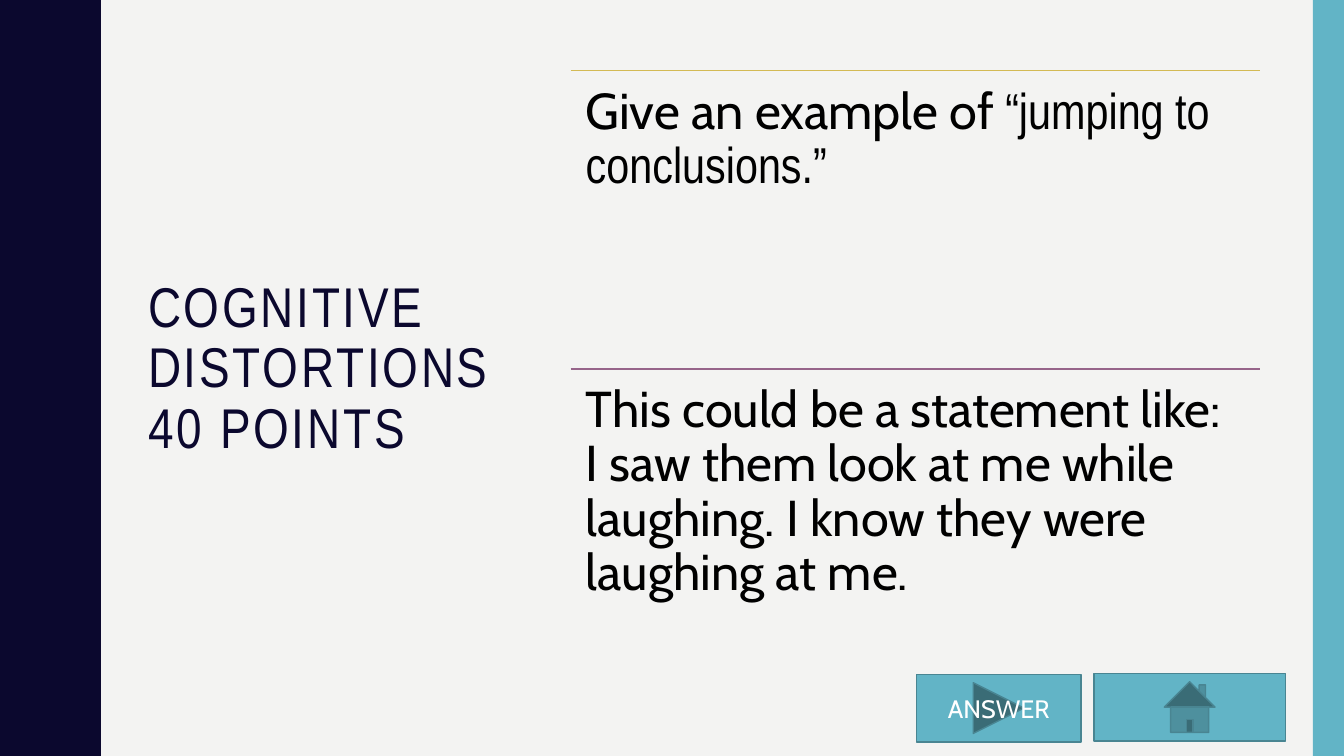
"""Build a quiz slide with a wavy side band, a question, its answer and two buttons."""
from lxml.etree import SubElement
from pptx import Presentation
from pptx.dml.color import RGBColor
from pptx.enum.shapes import MSO_CONNECTOR, MSO_SHAPE
from pptx.enum.text import MSO_ANCHOR, PP_ALIGN
from pptx.oxml.ns import qn
from pptx.util import Inches, Pt

WIDTH, HEIGHT = 13.33, 7.5
HEAD, BODY = "Arial Narrow", "Cabin"
COLORS = {"paper": "F3F3F2", "navy": "0B082E", "teal": "62B4C6", "edge": "498592",
          "gold": "D3BA55", "plum": "96648A", "black": "000000", "white": "FFFFFF"}

TITLE = "COGNITIVE DISTORTIONS\v40 POINTS"
SECTIONS = [
    ("gold", [("Give an example of ", BODY), ("“jumping to conclusions.”", HEAD)]),
    ("plum", [("This could be a statement like: I saw them look at me while laughing. "
               "I know they were laughing at me.", BODY)]),
]
BUTTONS = [
    (MSO_SHAPE.ACTION_BUTTON_HOME, (10.85, 6.68, 1.9, 0.67), ""),
    (MSO_SHAPE.ACTION_BUTTON_FORWARD_OR_NEXT, (9.09, 6.69, 1.63, 0.67), "ANSWER"),
]
SECTION_LEFT, SECTION_TOP, SECTION_WIDTH, SECTION_HEIGHT = 5.66, 0.7, 6.84, 2.96
WAVES = 5
HALF_WAVE = [(0.78, 0), (0.78, 0.07), (0.79, 0.14), (0.8, 0.2), (0.81, 0.25),
             (0.83, 0.29), (0.85, 0.33), (0.87, 0.38), (0.89, 0.42), (0.91, 0.46),
             (0.93, 0.5), (0.95, 0.55), (0.96, 0.61), (0.97, 0.68), (0.97, 0.75)]


def rgb(name):
    return RGBColor.from_string(COLORS[name])


def paint(sp, fill, line=None):
    sp.shadow.inherit = False
    sp.fill.solid()
    sp.fill.fore_color.rgb = rgb(fill)
    if line:
        sp.line.color.rgb = rgb(line)
        sp.line.width = Pt(1)
    else:
        sp.line.fill.background()


def set_font(font, size, color, name=None):
    font.size = Pt(size)
    font.color.rgb = rgb(color)
    if name:
        font.name = name


def add_text_frame(s, *box):
    tf = s.shapes.add_textbox(*map(Inches, box)).text_frame
    tf.word_wrap = True
    tf.paragraphs[0].line_spacing = 0.9
    return tf


def add_wave(s):
    period = HEIGHT / WAVES
    wave = HALF_WAVE + [(x, period - y) for x, y in HALF_WAVE[-2::-1]]
    edge = [(x, i * period + y) for i in range(WAVES) for x, y in wave]
    builder = s.shapes.build_freeform(0, 0, scale=Inches(1))
    builder.add_line_segments(edge + [(0, HEIGHT)], close=True)
    paint(builder.convert_to_shape(), "navy")


def add_button(s, kind, box, label):
    sp = s.shapes.add_shape(kind, *map(Inches, box))
    paint(sp, "teal", "edge")
    if label:
        tf = sp.text_frame
        tf.vertical_anchor = MSO_ANCHOR.MIDDLE
        p = tf.paragraphs[0]
        p.text = label
        p.alignment = PP_ALIGN.CENTER
        set_font(p.font, 18, "white", BODY)


def add_title(s):
    tf = add_text_frame(s, 1.37, 0.71, 3.7, 5.91)
    tf.vertical_anchor = MSO_ANCHOR.MIDDLE
    p = tf.paragraphs[0]
    p.text = TITLE
    set_font(p.font, 40, "navy", HEAD)
    for r in p.runs:
        r._r.get_or_add_rPr().set("spc", "200")


def add_section(s, top, color, runs):
    left, right = SECTION_LEFT, SECTION_LEFT + SECTION_WIDTH
    rule = s.shapes.add_connector(MSO_CONNECTOR.STRAIGHT,
                                  *map(Inches, (left, top, right, top)))
    rule.line.color.rgb = rgb(color)
    rule.line.width = Pt(1)
    SubElement(rule._element.spPr, qn("a:effectLst"))
    tf = add_text_frame(s, left, top, SECTION_WIDTH, SECTION_HEIGHT)
    tf.margin_left = tf.margin_top = tf.margin_right = tf.margin_bottom = Inches(0.15)
    p = tf.paragraphs[0]
    set_font(p.font, 36, "black")
    for text, name in runs:
        r = p.add_run()
        r.text = text
        r.font.name = name


def main():
    prs = Presentation()
    prs.slide_width, prs.slide_height = Inches(WIDTH), Inches(HEIGHT)
    s = prs.slides.add_slide(prs.slide_layouts[6])
    s.background.fill.solid()
    s.background.fill.fore_color.rgb = rgb("paper")
    add_wave(s)
    band = s.shapes.add_shape(MSO_SHAPE.RECTANGLE,
                              *map(Inches, (13.02, 0, WIDTH - 13.02, HEIGHT)))
    paint(band, "teal")
    for button in BUTTONS:
        add_button(s, *button)
    add_title(s)
    for i, section in enumerate(SECTIONS):
        add_section(s, SECTION_TOP + i * SECTION_HEIGHT, *section)
    prs.save("out.pptx")


if __name__ == "__main__":
    main()
